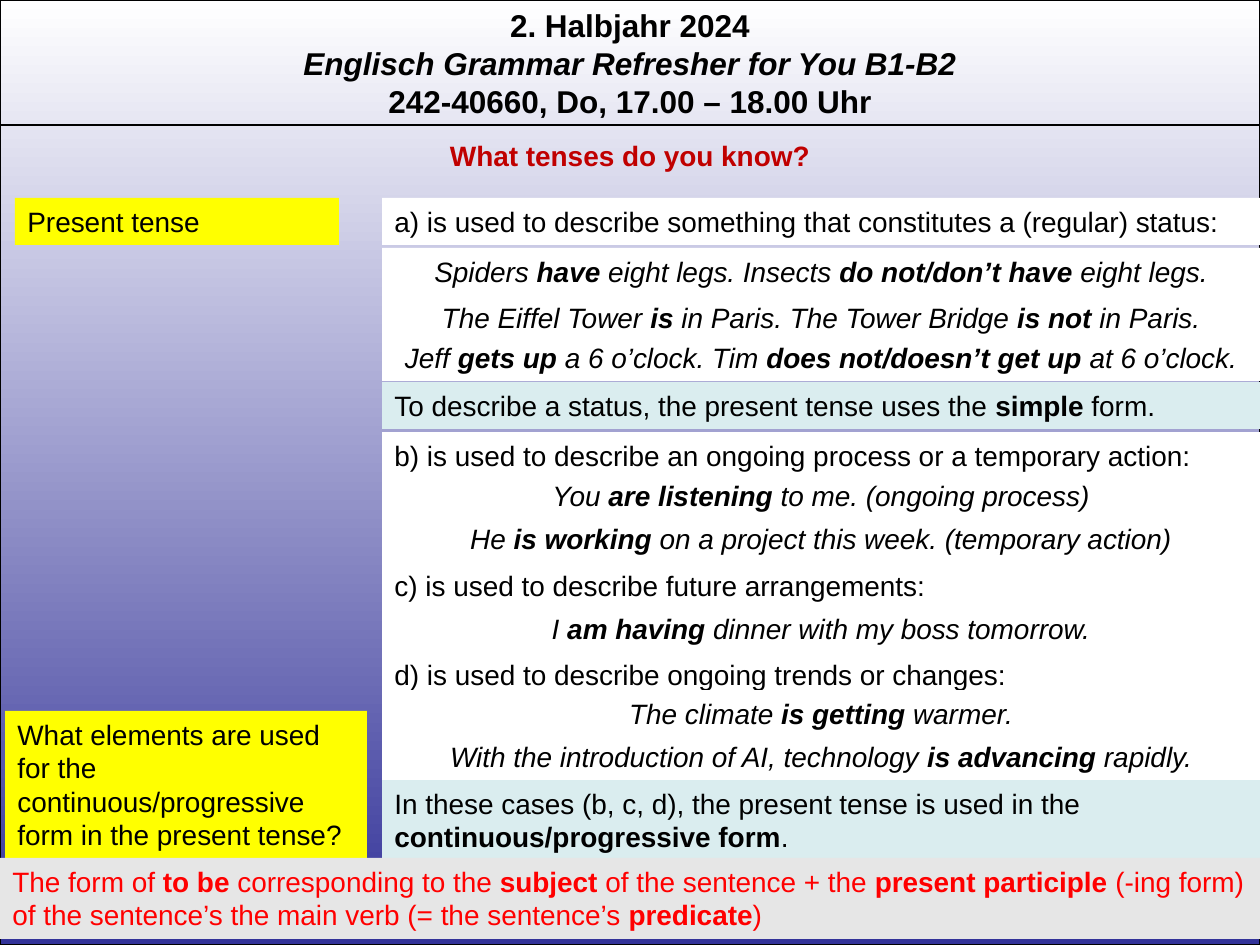
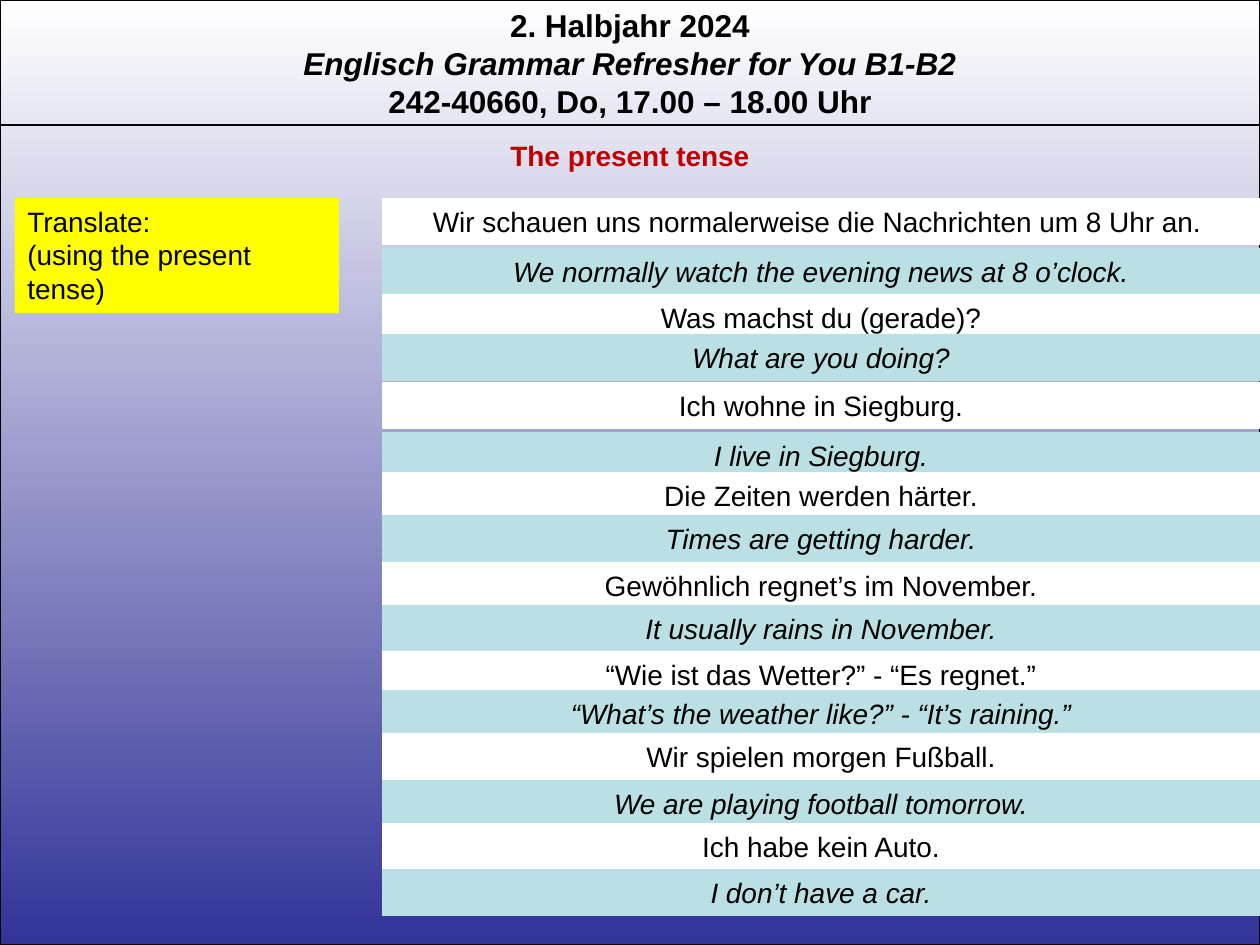
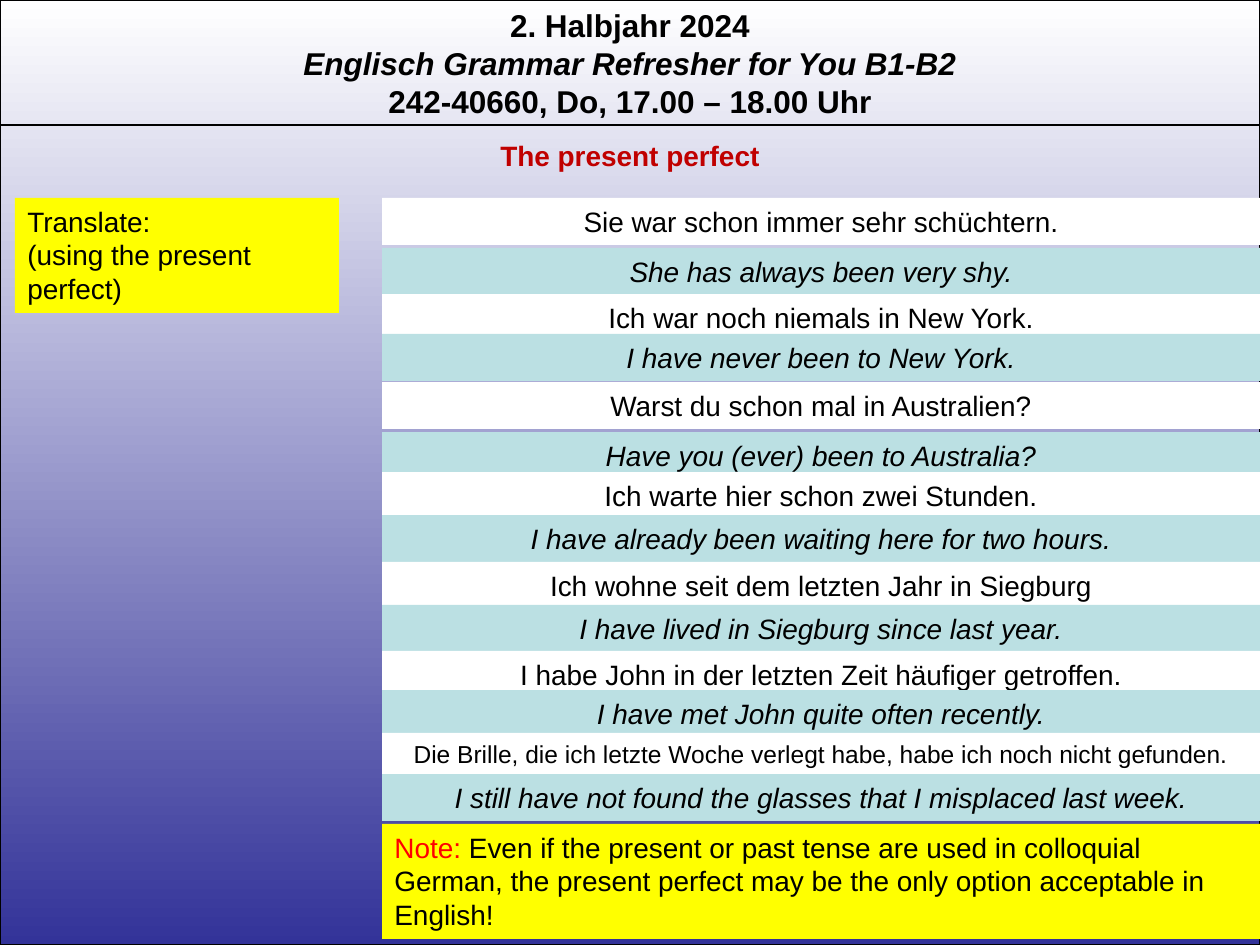
from lxml.etree import SubElement
from pptx import Presentation
from pptx.dml.color import RGBColor
from pptx.enum.shapes import MSO_CONNECTOR, MSO_SHAPE
from pptx.enum.text import MSO_ANCHOR, MSO_AUTO_SIZE, PP_ALIGN
from pptx.oxml.ns import qn
from pptx.util import Emu, Pt

PX = 914400 / 126
PAGE_WIDTH, PAGE_HEIGHT = 1260, 945
FONT = "Arial"
COLORS = {
    "black": "000000",
    "white": "FFFFFF",
    "navy": "333399",
    "title": "C00000",
    "red": "FF0000",
    "yellow": "FFFF00",
    "teal": "BBE0E3",
    "pale": "DAEDEF",
    "gray": "E6E6E6",
}
ROW_LEFT, ROW_WIDTH, ROW_HEIGHT = 382, 878, 47
ROW_TOPS = [198, 248, 294, 334, 382, 432, 472, 515, 562, 605, 651, 690, 733, 780, 823, 869]
ROW_STYLES = {
    "rule": {"fill": "white"},
    "example": {"fill": "white", "align": PP_ALIGN.CENTER, "italic": True},
    "summary": {"fill": "pale", "height": 81},
    "short summary": {"fill": "pale"},
    "german": {"fill": "white", "align": PP_ALIGN.CENTER},
    "small german": {"fill": "white", "align": PP_ALIGN.CENTER, "size": 14, "height": 43},
    "english": {"fill": "teal", "align": PP_ALIGN.CENTER, "italic": True},
}

TENSE_RULES = [
    ("rule", "a) is used to describe something that constitutes a (regular) status:"),
    ("example", "Spiders **have** eight legs. Insects **do not/don’t have **eight legs."),
    ("example", "The Eiffel Tower **is** in Paris. The Tower Bridge **is not **in Paris."),
    ("example", "Jeff **gets up **a 6 o’clock. Tim **does not/doesn’t get up **at 6 o’clock."),
    ("short summary", "To describe a status, the present tense uses the **simple** form."),
    ("rule", "b) is used to describe an ongoing process or a temporary action:"),
    ("example", "You **are listening **to me. (ongoing process)"),
    ("example", "He **is working **on a project this week. (temporary action)"),
    ("rule", "c) is used to describe future arrangements:"),
    ("example", "I **am having **dinner with my boss tomorrow."),
    ("rule", "d) is used to describe ongoing trends or changes:"),
    ("example", "The climate **is getting **warmer."),
    ("example", "With the introduction of AI, technology **is advancing **rapidly."),
    ("summary", "In these cases (b, c, d), the present tense is used in the "
                "**continuous/progressive form**."),
]
PRESENT_PAIRS = [
    ("Wir schauen uns normalerweise die Nachrichten um 8 Uhr an. ",
     "We normally watch the evening news at 8 o’clock."),
    ("Was machst du (gerade)?", "What are you doing?"),
    ("Ich wohne in Siegburg.", "I live in Siegburg."),
    ("Die Zeiten werden härter.", "Times are getting harder."),
    ("Gewöhnlich regnet’s im November.", "It usually rains in November."),
    ("“Wie ist das Wetter?” - “Es regnet.”", "“What’s the weather like?” - “It’s raining.”"),
    ("Wir spielen morgen Fußball.", "We are playing football tomorrow."),
    ("Ich habe kein Auto.", "I don’t have a car."),
]
PERFECT_PAIRS = [
    ("Sie war schon immer sehr schüchtern.", "She has always been very shy."),
    ("Ich war noch niemals in New York.", "I have never been to New York."),
    ("Warst du schon mal in Australien?", "Have you (ever) been to Australia?"),
    ("Ich warte hier schon zwei Stunden.", "I have already been waiting here for two hours."),
    ("Ich wohne seit dem letzten Jahr in Siegburg", "I have lived in Siegburg since last year."),
    ("I habe John in der letzten Zeit häufiger getroffen.",
     "I have met John quite often recently."),
]
GLASSES_ROWS = [
    ("small german",
     "Die Brille, die ich letzte Woche verlegt habe, habe ich noch nicht gefunden."),
    ("english", "I still have not found the glasses that I misplaced last week."),
]


def px(length):
    return Emu(round(length * PX))


def color(name):
    return RGBColor.from_string(COLORS[name])


def write(box, text, size=16, ink="black", bold=False, italic=False,
          align=PP_ALIGN.LEFT, accent=None):
    frame = box.text_frame
    para = frame.add_paragraph() if frame.text else frame.paragraphs[0]
    para.alignment = align
    for index, part in enumerate(text.split("**")):
        if not part:
            continue
        marked = index % 2 == 1
        span = para.add_run()
        span.text = part
        span.font.name = FONT
        span.font.size = Pt(size)
        span.font.italic = italic
        span.font.bold = bold or (marked and accent is None)
        span.font.color.rgb = color(accent if marked and accent else ink)


def prepare_text(box):
    frame = box.text_frame
    frame.word_wrap = True
    frame.vertical_anchor = MSO_ANCHOR.TOP
    frame.auto_size = MSO_AUTO_SIZE.SHAPE_TO_FIT_TEXT
    return box


def add_panel(page, left, top, width, height, fill):
    box = page.shapes.add_shape(MSO_SHAPE.RECTANGLE, px(left), px(top), px(width), px(height))
    box.shadow.inherit = False
    box.fill.solid()
    box.fill.fore_color.rgb = color(fill)
    box.line.fill.background()
    return prepare_text(box)


def add_caption(page, left, top, width, height):
    return prepare_text(page.shapes.add_textbox(px(left), px(top), px(width), px(height)))


def add_backdrop(page):
    backdrop = page.shapes.add_shape(MSO_SHAPE.RECTANGLE, 0, 0, px(PAGE_WIDTH), px(PAGE_HEIGHT))
    backdrop.shadow.inherit = False
    backdrop.fill.gradient()
    backdrop.fill.gradient_angle = 270
    for stop, name, position in zip(backdrop.fill.gradient_stops, ("white", "navy"), (0, 1)):
        stop.color.rgb = color(name)
        stop.position = position
    backdrop.line.color.rgb = color("black")
    backdrop.line.width = Pt(0.75)


def add_header(page):
    header = add_caption(page, 0, 0, PAGE_WIDTH, 127)
    for text, italic in (("2. Halbjahr 2024", False),
                         ("Englisch Grammar Refresher for You B1-B2", True),
                         ("242-40660, Do, 17.00 – 18.00 Uhr", False)):
        write(header, text, size=18, bold=True, italic=italic, align=PP_ALIGN.CENTER)
    rule = page.shapes.add_connector(MSO_CONNECTOR.STRAIGHT, 0, px(125), px(PAGE_WIDTH), px(125))
    rule.line.color.rgb = color("black")
    rule.line.width = Pt(0.75)
    SubElement(rule._element.spPr, qn("a:effectLst"))


def add_page(deck, title):
    page = deck.slides.add_slide(deck.slide_layouts[6])
    add_backdrop(page)
    add_header(page)
    heading = add_caption(page, 0, 132, PAGE_WIDTH, ROW_HEIGHT)
    write(heading, title, ink="title", bold=True, align=PP_ALIGN.CENTER)
    return page


def add_task(page, lines, height):
    task = add_panel(page, 15, ROW_TOPS[0], 324, height, "yellow")
    for line in lines:
        write(task, line)


def add_rows(page, rows, tops):
    for (style, text), top in zip(rows, tops):
        look = dict(ROW_STYLES[style])
        height = look.pop("height", ROW_HEIGHT)
        row = add_panel(page, ROW_LEFT, top, ROW_WIDTH, height, look.pop("fill"))
        write(row, text, **look)


def pair_rows(pairs):
    return [row for german, english in pairs
            for row in (("german", german), ("english", english))]


def build_rules_page(deck):
    page = add_page(deck, "What tenses do you know?")
    add_task(page, ["Present tense"], ROW_HEIGHT)
    add_rows(page, TENSE_RULES, ROW_TOPS)
    question = add_panel(page, 5, 711, 362, 149, "yellow")
    write(question, "What elements are used for the continuous/progressive form "
                    "in the present tense?")
    answer = add_panel(page, 0, 858, 1265, 81, "gray")
    write(answer, "The form of **to be **corresponding to the **subject** of the sentence + the "
                  "**present participle **(-ing form) of the sentence’s the main verb "
                  "(= the sentence’s **predicate**)", ink="red")


def build_translation_page(deck, tense, rows, tops):
    page = add_page(deck, f"The {tense}")
    add_task(page, ["Translate:", f"(using the {tense})"], 115)
    add_rows(page, rows, tops)
    return page


def add_note(page):
    note = add_panel(page, ROW_LEFT, 824, ROW_WIDTH, 115, "yellow")
    write(note, "**Note: **Even if the present or past tense are used in colloquial German, "
                "the present perfect may be the only option acceptable in English!", accent="red")


def main():
    deck = Presentation()
    deck.slide_width, deck.slide_height = px(PAGE_WIDTH), px(PAGE_HEIGHT)
    build_rules_page(deck)
    build_translation_page(deck, "present tense", pair_rows(PRESENT_PAIRS), ROW_TOPS)
    perfect_page = build_translation_page(
        deck, "present perfect", pair_rows(PERFECT_PAIRS) + GLASSES_ROWS, ROW_TOPS[:13] + [774])
    add_note(perfect_page)
    deck.save("out.pptx")


if __name__ == "__main__":
    main()
